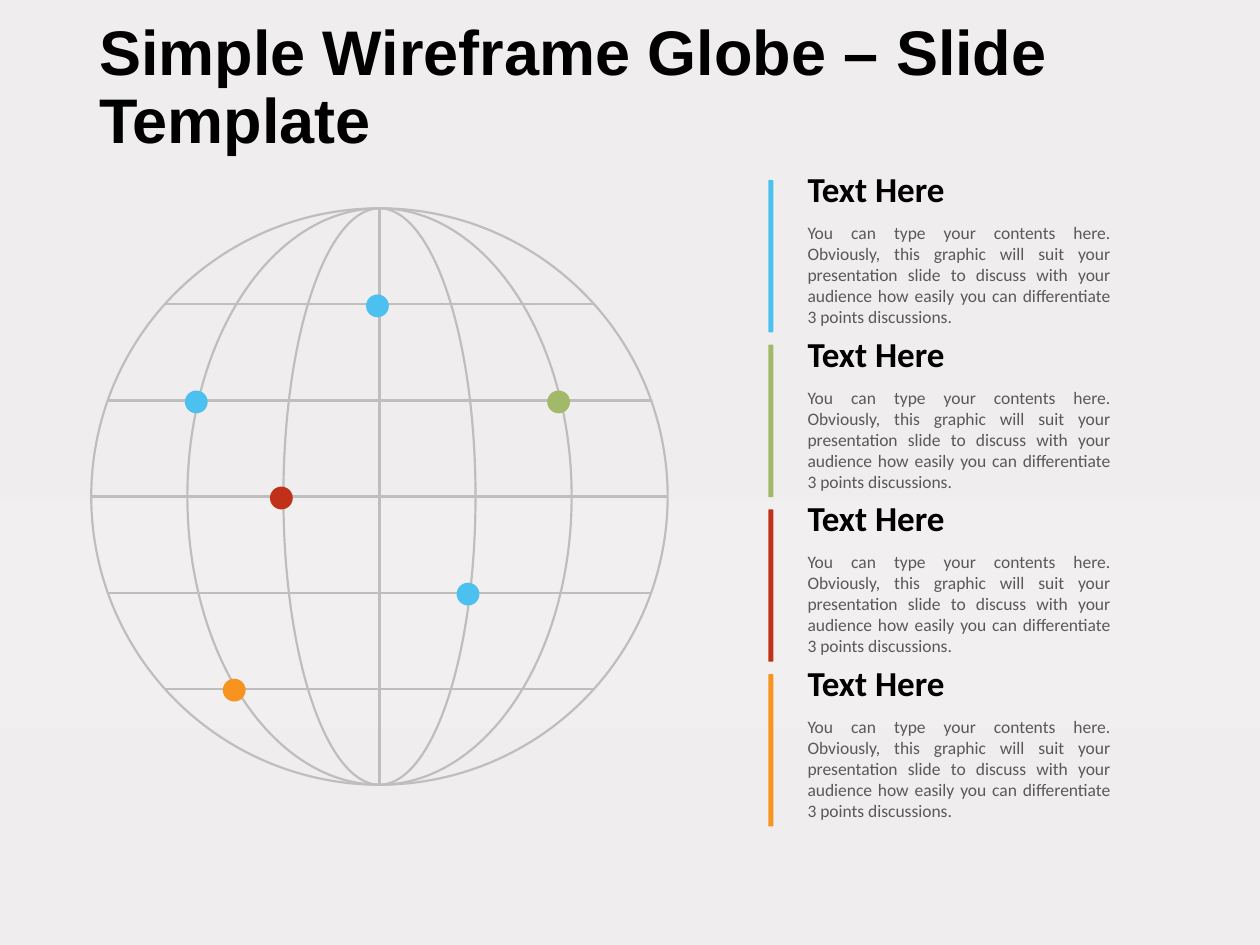
from math import sqrt

from lxml.etree import SubElement
from pptx import Presentation
from pptx.dml.color import RGBColor
from pptx.enum.shapes import MSO_CONNECTOR, MSO_SHAPE
from pptx.enum.text import MSO_ANCHOR, MSO_AUTO_SIZE, PP_ALIGN
from pptx.oxml.ns import qn
from pptx.util import Cm, Pt

BLUE = RGBColor(0x4C, 0xC1, 0xEF)
GREEN = RGBColor(0xA2, 0xB9, 0x69)
RED = RGBColor(0xC1, 0x30, 0x18)
ORANGE = RGBColor(0xF7, 0x93, 0x1F)
GRID = RGBColor(0xBE, 0xBE, 0xBE)
BLACK = RGBColor(0, 0, 0)
GRAY = RGBColor(0x59, 0x59, 0x59)

TITLE = "Simple Wireframe Globe – Slide Template"
HEADING = "Text Here"
BODY = (
    "You can type your contents here. Obviously, this graphic will suit your "
    "presentation slide to discuss with your audience how easily you can "
    "differentiate 3 points discussions."
)
SECTIONS = [(color, HEADING, BODY) for color in (BLUE, GREEN, RED, ORANGE)]
BACKGROUND_STOPS = [(0, "EFEDEE"), (53, "F1EFF0"), (77, "EFEDEE"), (100, "EFEBEC")]

# Each marker is (meridian, parallel, color), counted from the globe centre.
MARKERS = [
    (0, -2, BLUE),
    (-2, -1, BLUE),
    (-1, 0, RED),
    (1, 1, BLUE),
    (2, -1, GREEN),
    (-2, 2, ORANGE),
]
CENTER_X, CENTER_Y, RADIUS = 7.65, 10.01, 5.81
DIVISIONS = 3
MARKER_SIZE = 0.46
SECTION_TOP, SECTION_PITCH = 3.63, 3.32


def paint_background(slide):
    fill = slide.background.fill
    fill.gradient()
    fill.gradient_angle = 270
    stop_list = fill.gradient_stops[0]._gs.getparent()
    for stop in list(stop_list):
        stop_list.remove(stop)
    for position, color in BACKGROUND_STOPS:
        stop = SubElement(stop_list, qn("a:gs"), pos=str(position * 1000))
        SubElement(stop, qn("a:srgbClr"), val=color)


def add_solid(slide, kind, left, top, width, height, color):
    shape = slide.shapes.add_shape(kind, Cm(left), Cm(top), Cm(width), Cm(height))
    shape.shadow.inherit = False
    shape.fill.solid()
    shape.fill.fore_color.rgb = color
    shape.line.fill.background()


def add_text(slide, text, box, font_name, size, color, bold=False, inset=0):
    shape = slide.shapes.add_textbox(*(Cm(length) for length in box))
    frame = shape.text_frame
    frame.text = text
    frame.word_wrap = True
    frame.margin_left, frame.margin_right = Cm(inset), 0
    font = frame.paragraphs[0].runs[0].font
    font.name, font.size, font.bold = font_name, Pt(size), bold
    font.color.rgb = color
    return frame


def format_grid_line(line):
    line.color.rgb = GRID
    line.width = Pt(1.25)


def add_grid_line(slide, *ends):
    connector = slide.shapes.add_connector(
        MSO_CONNECTOR.STRAIGHT, *(Cm(length) for length in ends))
    format_grid_line(connector.line)
    SubElement(connector._element.spPr, qn("a:effectLst"))


def half_chord(parallel):
    return RADIUS * sqrt(1 - (parallel / DIVISIONS) ** 2)


def add_globe(slide):
    step = RADIUS / DIVISIONS
    for meridian in range(1, DIVISIONS + 1):
        half_width = meridian * step
        ellipse = slide.shapes.add_shape(
            MSO_SHAPE.OVAL, Cm(CENTER_X - half_width), Cm(CENTER_Y - RADIUS),
            Cm(2 * half_width), Cm(2 * RADIUS))
        ellipse.shadow.inherit = False
        ellipse.fill.background()
        format_grid_line(ellipse.line)
    add_grid_line(slide, CENTER_X, CENTER_Y - RADIUS, CENTER_X, CENTER_Y + RADIUS)
    for parallel in range(1 - DIVISIONS, DIVISIONS):
        y = CENTER_Y + parallel * step
        half_width = half_chord(parallel)
        add_grid_line(slide, CENTER_X - half_width, y, CENTER_X + half_width, y)
    for meridian, parallel, color in MARKERS:
        x = CENTER_X - 0.04 + meridian / DIVISIONS * half_chord(parallel)
        y = CENTER_Y + 0.03 + parallel * step
        add_solid(slide, MSO_SHAPE.OVAL, x - MARKER_SIZE / 2, y - MARKER_SIZE / 2,
                  MARKER_SIZE, MARKER_SIZE, color)


def add_section(slide, top, color, heading, body):
    add_solid(slide, MSO_SHAPE.ROUNDED_RECTANGLE, 15.49, top, 0.1, 3.07, color)
    heading_frame = add_text(slide, heading, (16.28, top - 0.39, 6.1, 1.11),
                             "Calibri", 20, BLACK, bold=True)
    heading_frame.vertical_anchor = MSO_ANCHOR.BOTTOM
    body_frame = add_text(slide, body, (16.28, top + 0.72, 6.1, 2.39),
                          "Calibri", 10, GRAY)
    body_frame.paragraphs[0].alignment = PP_ALIGN.JUSTIFY
    body_frame.paragraphs[0].space_after = Pt(12)
    for frame in (heading_frame, body_frame):
        frame.auto_size = MSO_AUTO_SIZE.SHAPE_TO_FIT_TEXT


def main():
    presentation = Presentation()
    presentation.slide_width, presentation.slide_height = Cm(25.4), Cm(19.05)
    slide = presentation.slides.add_slide(presentation.slide_layouts[6])
    paint_background(slide)
    title = add_text(slide, TITLE, (1.75, 0.3, 23.65, 2.06), "Arial", 36, BLACK,
                     bold=True, inset=0.25)
    title.paragraphs[0].line_spacing = 0.9
    add_globe(slide)
    for index, section in enumerate(SECTIONS):
        add_section(slide, SECTION_TOP + index * SECTION_PITCH, *section)
    presentation.save("out.pptx")


if __name__ == "__main__":
    main()
